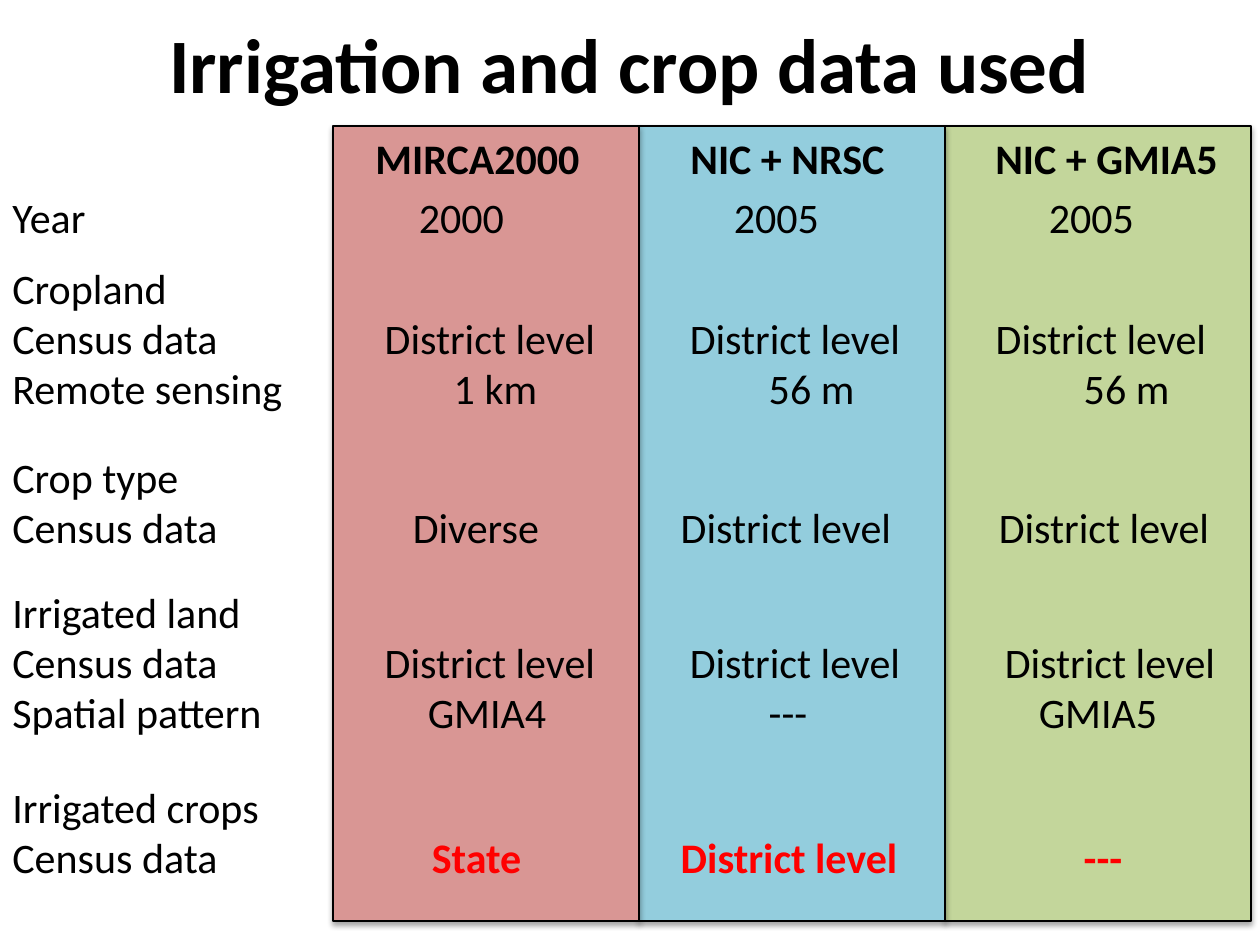
import pptx
import pptx.util
from lxml import etree
from pptx.dml.color import RGBColor
from pptx.enum.shapes import MSO_SHAPE
from pptx.enum.text import MSO_ANCHOR, MSO_AUTO_SIZE, PP_ALIGN
from pptx.oxml.ns import qn

BLACK = RGBColor(0, 0, 0)
RED = RGBColor(0xFF, 0, 0)
PINK = RGBColor(0xD9, 0x96, 0x94)
BLUE = RGBColor(0x93, 0xCD, 0xDD)
GREEN = RGBColor(0xC3, 0xD6, 0x9B)

TITLE = "Irrigation and crop data used"
# Data sets: heading, heading left, heading width, column colour
DATA_SETS = [
    ("MIRCA2000", 363, 232, PINK),
    ("NIC + NRSC", 678, 222, BLUE),
    ("NIC + GMIA5", 983, 250, GREEN),
]
# Blocks: top, height, rows of (label, [(value, left edge), ...])
BLOCKS = [
    (185, 63, [("Year", [("2000", 419), ("2005", 734), ("2005", 1049)])]),
    (256, 165, [
        ("Cropland", []),
        ("Census data", [("District level", 385), ("District level", 690), ("District level", 996)]),
        ("Remote sensing", [("1 km", 454), ("56 m", 769), ("56 m", 1084)]),
    ]),
    (445, 115, [
        ("Crop type", []),
        ("Census data", [("Diverse", 413), ("District level", 681), ("District level", 999)]),
    ]),
    (580, 165, [
        ("Irrigated land", []),
        ("Census data", [("District level", 385), ("District level", 690), ("District level", 1005)]),
        ("Spatial pattern", [("GMIA4", 428), ("---", 769), ("GMIA5", 1039)]),
    ]),
    (775, 115, [
        ("Irrigated crops", []),
        ("Census data", [("State", 432), ("District level", 681), ("---", 1084)]),
    ]),
]
HIGHLIGHTED_BLOCK = BLOCKS[-1]

SLIDE_WIDTH, SLIDE_HEIGHT = 1260, 945
COLUMN_LEFT, COLUMN_TOP, COLUMN_WIDTH, COLUMN_HEIGHT = 333, 126, 306, 795
HEADING_HEIGHT = 63
INSET = 12.6


def px(length):
    return pptx.util.Emu(round(length * 914400 / 126))


def set_font(font, size=24, bold=False, color=BLACK):
    font.name = "Calibri"
    font.size = pptx.util.Pt(size)
    font.bold = bold
    font.color.rgb = color


def add_shadow(shape):
    shape.shadow.inherit = False
    effects = shape._element.spPr.find(qn("a:effectLst"))
    shadow = etree.SubElement(effects, qn("a:outerShdw"), blurRad="40000", dist="23000",
                              dir="5400000", rotWithShape="0")
    color = etree.SubElement(shadow, qn("a:srgbClr"), val="000000")
    etree.SubElement(color, qn("a:alpha"), val="35000")


def add_text_box(slide, left, top, width, height, wrap):
    box = slide.shapes.add_textbox(px(left), px(top), px(width), px(height))
    box.text_frame.word_wrap = wrap
    box.text_frame.auto_size = MSO_AUTO_SIZE.SHAPE_TO_FIT_TEXT
    return box.text_frame


def add_tab_stops(paragraph, edges):
    tabs = etree.Element(qn("a:tabLst"))
    for edge in edges:
        etree.SubElement(tabs, qn("a:tab"), pos=str(px(edge - INSET)), algn="l")
    paragraph._p.get_or_add_pPr().insert(0, tabs)


def add_column(slide, index, color):
    column = slide.shapes.add_shape(
        MSO_SHAPE.RECTANGLE, px(COLUMN_LEFT + index * COLUMN_WIDTH), px(COLUMN_TOP),
        px(COLUMN_WIDTH), px(COLUMN_HEIGHT))
    column.fill.solid()
    column.fill.fore_color.rgb = color
    column.line.color.rgb = BLACK
    column.line.width = pptx.util.Pt(0.75)
    add_shadow(column)


def add_block(slide, block):
    top, height, rows = block
    frame = add_text_box(slide, 0, top, SLIDE_WIDTH, height, True)
    for number, (label, values) in enumerate(rows):
        paragraph = frame.paragraphs[0] if number == 0 else frame.add_paragraph()
        set_font(paragraph.font)
        paragraph.add_run().text = label
        if values:
            run = paragraph.add_run()
            run.text = "".join("\t" + value for value, edge in values)
            if block is HIGHLIGHTED_BLOCK:
                set_font(run.font, bold=True, color=RED)
            add_tab_stops(paragraph, [edge for value, edge in values])


def main():
    presentation = pptx.Presentation()
    presentation.slide_width, presentation.slide_height = px(SLIDE_WIDTH), px(SLIDE_HEIGHT)
    slide = presentation.slides.add_slide(presentation.slide_layouts.get_by_name("Title Only"))

    # Coloured columns, the leftmost in front
    for index, data_set in reversed(list(enumerate(DATA_SETS))):
        add_column(slide, index, data_set[-1])

    # Title
    title = slide.shapes.title
    title.left, title.top, title.width, title.height = px(63), px(0), px(1134), px(126)
    title.text_frame.text = TITLE
    title.text_frame.vertical_anchor = MSO_ANCHOR.MIDDLE
    title.text_frame.paragraphs[0].alignment = PP_ALIGN.CENTER
    set_font(title.text_frame.paragraphs[0].font, size=44, bold=True)

    # Column headings
    for heading, left, width, color in DATA_SETS:
        frame = add_text_box(slide, left, COLUMN_TOP, width, HEADING_HEIGHT, False)
        frame.text = heading
        set_font(frame.paragraphs[0].font, bold=True)

    # Rows of data
    for block in BLOCKS:
        add_block(slide, block)

    presentation.save("out.pptx")


if __name__ == "__main__":
    main()
